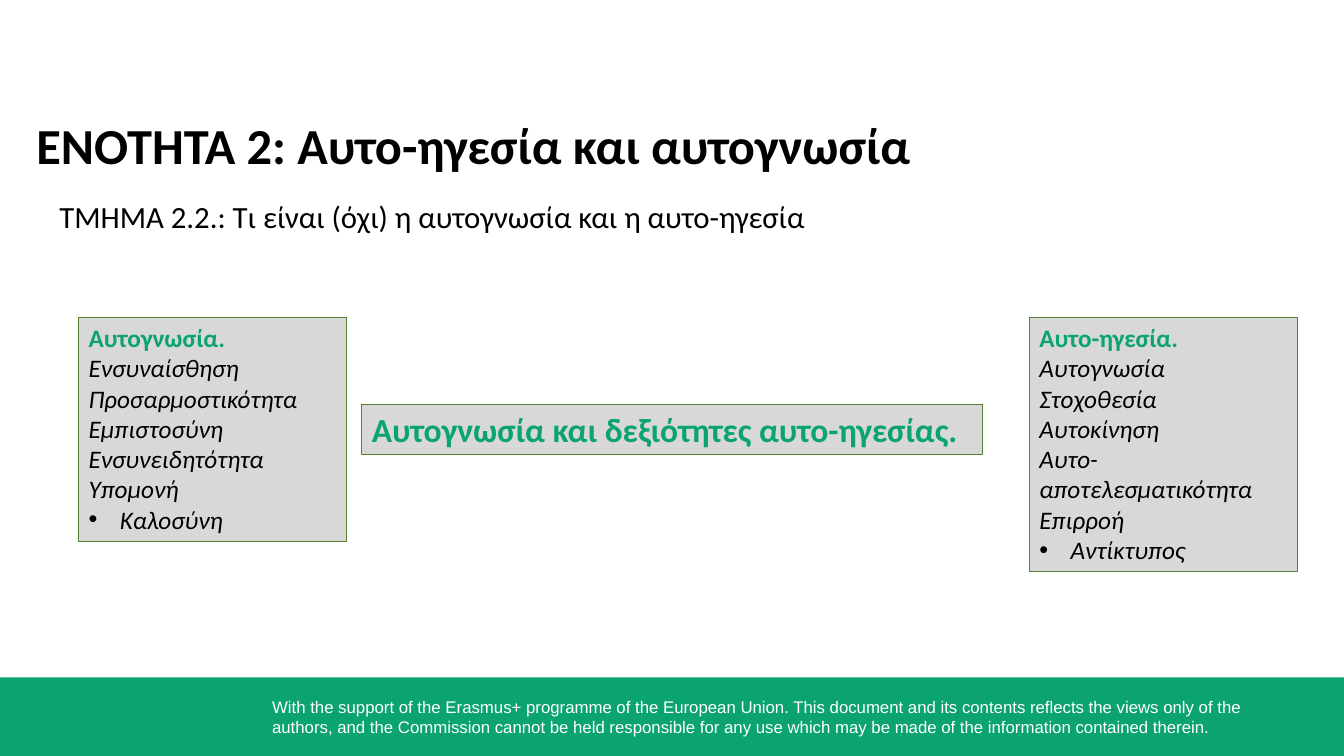
from lxml import etree
from pptx import Presentation
from pptx.dml.color import RGBColor
from pptx.enum import shapes, text
from pptx.oxml import ns
from pptx.util import Inches, Pt

GREEN = RGBColor(0x0C, 0xA3, 0x73)
BORDER = RGBColor(0x54, 0x81, 0x35)
GREY = RGBColor(0xD8, 0xD8, 0xD8)
BLACK = RGBColor(0, 0, 0)
WHITE = RGBColor(0xFF, 0xFF, 0xFF)

TITLE = dict(name="Calibri", size=Pt(36), bold=True, color=BLACK)
SUBTITLE = dict(name="Calibri", size=Pt(22), bold=False, color=BLACK)
SKILLS = dict(name="Calibri", size=Pt(24), bold=True, color=GREEN)
HEADING = dict(name="Calibri", size=Pt(18), bold=True, color=GREEN)
ITEM = dict(name="Calibri", size=Pt(18), bold=False, italic=True, color=BLACK)
FOOTER = dict(name="Arial", size=Pt(12), bold=False, color=WHITE)

BOX_INSETS = (0.1, 0.05, 0.1, 0.05)
SUPPORT = (
    "With the support of the Erasmus+ programme of the European Union. "
    "This document and its contents reflects the views only of the authors, "
    "and the Commission cannot be held responsible for any use which may be "
    "made of the information contained therein."
)
COLUMNS = [
    (0.78, 2.22, "Αυτογνωσία.",
     ["Ενσυναίσθηση", "Προσαρμοστικότητα", "Εμπιστοσύνη",
      "Ενσυνειδητότητα", "Υπομονή", "Καλοσύνη"]),
    (10.21, 2.52, "Αυτο-ηγεσία.",
     ["Αυτογνωσία", "Στοχοθεσία", "Αυτοκίνηση",
      "Αυτο-αποτελεσματικότητα", "Επιρροή", "Αντίκτυπος"]),
]


def write(para, words, style, align=text.PP_ALIGN.LEFT):
    para.alignment = align
    span = para.add_run()
    span.text = words
    for key, value in style.items():
        if key == "color":
            span.font.color.rgb = value
        else:
            setattr(span.font, key, value)


def prepare_frame(box, insets):
    frame = box.text_frame
    settings = dict(
        word_wrap=True,
        auto_size=text.MSO_AUTO_SIZE.NONE,
        vertical_anchor=text.MSO_ANCHOR.TOP,
    )
    sides = ("margin_left", "margin_top", "margin_right", "margin_bottom")
    settings.update(zip(sides, map(Inches, insets)))
    for key, value in settings.items():
        setattr(frame, key, value)
    return frame


def add_bullet(para):
    properties = para._p.get_or_add_pPr()
    properties.set("marL", str(Inches(0.31)))
    properties.set("indent", str(-Inches(0.31)))
    color = etree.SubElement(properties, ns.qn("a:buClr"))
    etree.SubElement(color, ns.qn("a:srgbClr")).set("val", str(BLACK))
    etree.SubElement(properties, ns.qn("a:buFont")).set("typeface", "Arial")
    etree.SubElement(properties, ns.qn("a:buChar")).set("char", "•")


def add_rectangle(slide, place, fill, border=None):
    box = slide.shapes.add_shape(
        shapes.MSO_SHAPE.RECTANGLE, *map(Inches, place))
    box.shadow.inherit = False
    box.fill.solid()
    box.fill.fore_color.rgb = fill
    if border is None:
        box.line.fill.background()
    else:
        box.line.color.rgb = border
        box.line.width = Pt(0.75)
    return box


def add_text(slide, place, words, style, insets):
    box = slide.shapes.add_textbox(*map(Inches, place))
    write(prepare_frame(box, insets).paragraphs[0], words, style)


def add_title(slide, words):
    title = slide.shapes.title
    title.left, title.top, title.width, title.height = map(
        Inches, (0.35, 1.12, 11.38, 0.62))
    write(prepare_frame(title, (0.01, 0.01, 0, 0)).paragraphs[0], words, TITLE)


def add_column(slide, left, height, heading, items):
    box = add_rectangle(slide, (left, 3.15, 2.66, height), GREY, BORDER)
    frame = prepare_frame(box, BOX_INSETS)
    justify = text.PP_ALIGN.JUSTIFY
    write(frame.paragraphs[0], heading, HEADING, justify)
    for item in items:
        para = frame.add_paragraph()
        if item == items[-1]:
            add_bullet(para)
        write(para, item, ITEM, justify)


def main():
    deck = Presentation()
    deck.slide_width, deck.slide_height = Inches(13.33), Inches(7.5)
    slide = deck.slides.add_slide(deck.slide_layouts[5])

    add_rectangle(slide, (0, 6.72, 13.33, 0.78), GREEN)
    add_text(slide, (2.6, 6.86, 10.42, 0.5), SUPPORT, FOOTER, BOX_INSETS)
    add_title(slide, "ΕΝΟΤΗΤΑ 2: Αυτο-ηγεσία και αυτογνωσία")
    add_text(slide, (0.58, 1.94, 8.42, 0.76),
             "ΤΜΗΜΑ 2.2.: Τι είναι (όχι) η αυτογνωσία και η αυτο-ηγεσία",
             SUBTITLE, (0.01, 0.02, 0, 0))
    for column in COLUMNS:
        add_column(slide, *column)
    skills = add_rectangle(slide, (3.59, 4.01, 6.16, 0.5), GREY, BORDER)
    write(prepare_frame(skills, BOX_INSETS).paragraphs[0],
          "Αυτογνωσία και δεξιότητες αυτο-ηγεσίας.", SKILLS)

    deck.save("out.pptx")


if __name__ == "__main__":
    main()
